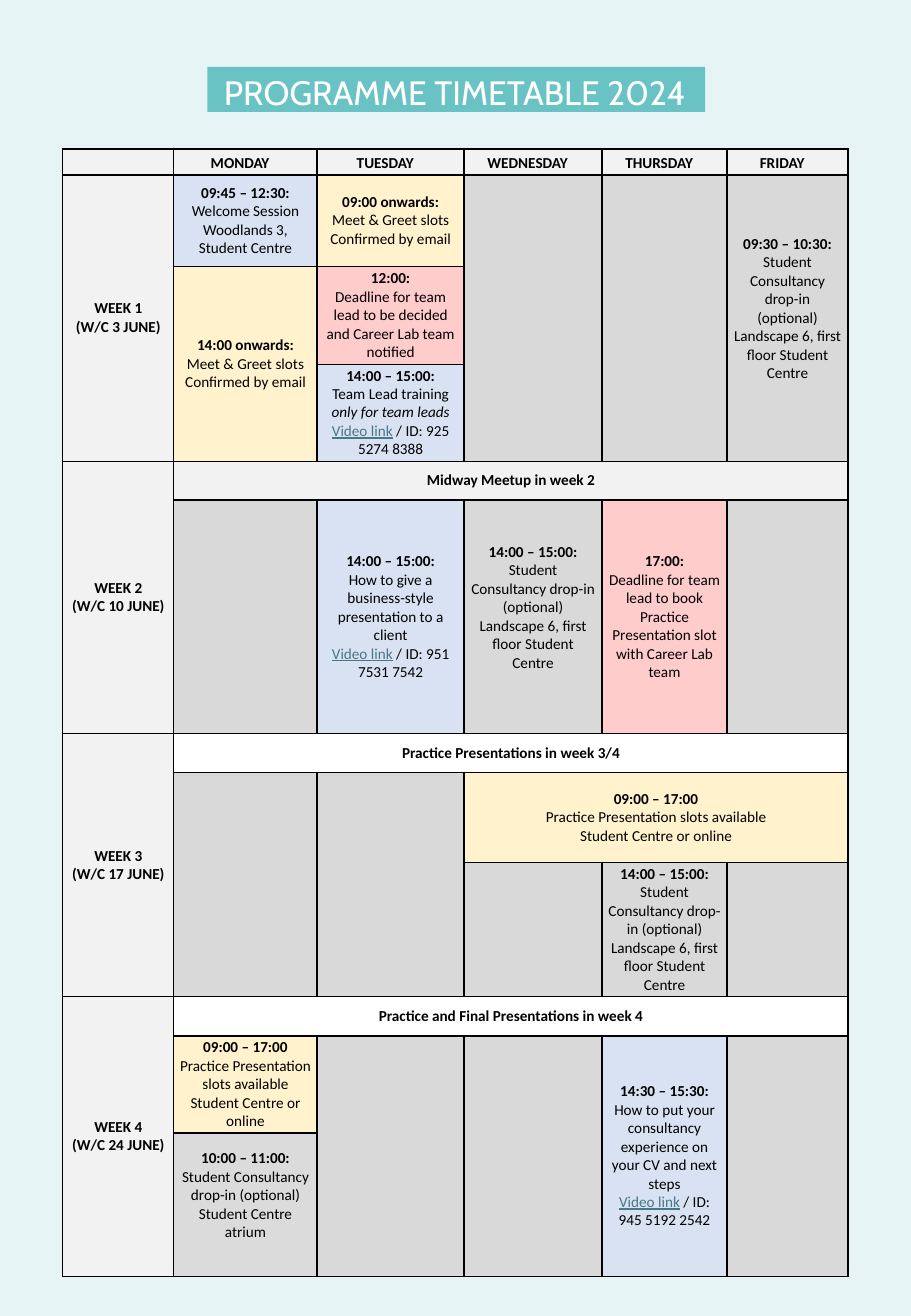
from lxml.etree import SubElement
from pptx import Presentation
from pptx.dml.color import RGBColor
from pptx.enum.shapes import MSO_SHAPE
from pptx.enum.text import MSO_ANCHOR, MSO_AUTO_SIZE, PP_ALIGN
from pptx.oxml.ns import qn
from pptx.util import Pt

COLORS = {
    "background": "E6F4F5", "banner": "69C3C4", "white": "FFFFFF", "black": "000000",
    "heading": "F2F2F2", "empty": "D9D9D9", "drop_in": "DBDBDB", "session": "D9E2F3",
    "slots": "FFF2CC", "deadline": "FFCCCC", "link": "467886",
}
FONT = "Calibri"
FONT_SIZE = 9
BLANK_LINE = 11
LINK = "Video link"

COLUMN_WIDTHS = [65.8, 85, 87.1, 81.8, 74.1, 71.7]
ROW_HEIGHTS = [15.4, 54.5, 57.8, 57.5, 23.1, 138.4, 23.1, 53.3, 79.4, 23.4, 57.5, 85]
DAYS = ["MONDAY", "TUESDAY", "WEDNESDAY", "THURSDAY", "FRIDAY"]

# row, row count, lines
WEEKS = [
    (1, 3, ["WEEK 1", "(W/C 3 JUNE)"]),
    (4, 2, ["WEEK 2", "(W/C 10 JUNE)"]),
    (6, 3, ["WEEK 3", "(W/C 17 JUNE)"]),
    (9, 3, ["WEEK 4", "(W/C 24 JUNE)"]),
]
BANNERS = [
    (4, "heading", "Midway Meetup in week 2"),
    (6, "white", "Practice Presentations in week 3/4"),
    (9, "white", "Practice and Final Presentations in week 4"),
]
EMPTY_BLOCKS = [(1, 3, 3), (1, 4, 3), (7, 1, 2), (7, 2, 2), (10, 2, 2), (10, 3, 2), (10, 5, 2)]
CONSULTANCY = "Student Consultancy drop-in (optional)"

EVENTS = [
    (1, 1, 1, 1, "session", ["09:45 – 12:30:", "Welcome Session", "Woodlands 3, Student Centre"]),
    (1, 2, 1, 1, "slots", ["09:00 onwards:", "Meet & Greet slots", "Confirmed by email"]),
    (1, 5, 3, 1, "empty", ["09:30 – 10:30:", "Student Consultancy drop-in\v(optional)",
                           "Landscape 6, first floor Student Centre"]),
    (2, 1, 2, 1, "slots", ["14:00 onwards:", "Meet & Greet slots", "Confirmed by email"]),
    (2, 2, 1, 1, "deadline", ["12:00:", "Deadline for team lead to be decided and Career Lab "
                              "team notified"]),
    (3, 2, 1, 1, "session", ["14:00 – 15:00:",
                             [("Team Lead training ", ""), ("only for team leads", "italic")],
                             [(LINK, "link"), (" / ID: 925 5274 8388", "")]]),
    (5, 2, 1, 1, "session", ["14:00 – 15:00:",
                             "How to give a business-style presentation to a client",
                             [(LINK, "link"), (" / ID: 951 7531 7542", "")]]),
    (5, 3, 1, 1, "empty", ["14:00 – 15:00:", CONSULTANCY,
                           "Landscape 6, first floor Student\vCentre"]),
    (5, 4, 1, 1, "deadline", ["17:00:", "Deadline for team lead to book Practice Presentation "
                              "slot with Career Lab team"]),
    (7, 3, 1, 3, "slots", ["09:00 – 17:00", "Practice Presentation slots available",
                           "Student Centre or online"]),
    (8, 4, 1, 1, "empty", ["14:00 – 15:00:", CONSULTANCY,
                           "Landscape 6, first floor Student Centre"]),
    (10, 1, 1, 1, "slots", ["09:00 – 17:00", "Practice Presentation slots available",
                            "Student Centre or online"]),
    (10, 4, 2, 1, "session", ["14:30 – 15:30:",
                              "How to put your consultancy experience on your CV and next steps",
                              [(LINK, "link"), (" / ID: 945 5192 2542", "")]]),
    (11, 1, 1, 1, "drop_in", ["10:00 – 11:00:", CONSULTANCY, "Student Centre atrium"]),
]
BLANK_LINE_BELOW = {(1, 5), (5, 3), (11, 1)}


def color(name):
    return RGBColor.from_string(COLORS[name])


def add_banner(slide):
    banner = slide.shapes.add_shape(MSO_SHAPE.RECTANGLE, Pt(123), Pt(39.7), Pt(295), Pt(26.7))
    banner.shadow.inherit = False
    banner.fill.solid()
    banner.fill.fore_color.rgb = color("banner")
    banner.line.fill.background()
    slide.shapes.title.element.addprevious(banner.element)


def format_title(title):
    title.left, title.top, title.width, title.height = Pt(44), Pt(35.3), Pt(451.4), Pt(74)
    text_frame = title.text_frame
    text_frame.text = "PROGRAMME TIMETABLE 2024"
    text_frame.auto_size = MSO_AUTO_SIZE.NONE
    text_frame.vertical_anchor = MSO_ANCHOR.TOP
    paragraph = text_frame.paragraphs[0]
    paragraph.alignment = PP_ALIGN.CENTER
    paragraph.line_spacing = 1.15
    font = paragraph.runs[0].font
    font.name, font.size, font.color.rgb = "Cabin", Pt(20), color("white")


def fill_cell(cell, fill):
    cell.fill.solid()
    cell.fill.fore_color.rgb = color(fill)


def prepare_cell(cell):
    cell.margin_left = cell.margin_right = Pt(3.6)
    cell.margin_top = cell.margin_bottom = Pt(1.4)
    cell.vertical_anchor = MSO_ANCHOR.MIDDLE
    properties = cell._tc.get_or_add_tcPr()
    for side in ("a:lnL", "a:lnR", "a:lnT", "a:lnB"):
        border = SubElement(properties, qn(side), w=str(Pt(1)))
        SubElement(SubElement(border, qn("a:solidFill")), qn("a:srgbClr"), val=COLORS["black"])
    fill_cell(cell, "empty")
    paragraph = cell.text_frame.paragraphs[0]
    SubElement(paragraph._p, qn("a:endParaRPr"), sz=str(FONT_SIZE * 100))


def format_run(run, bold, style):
    font = run.font
    font.name, font.size, font.bold = FONT, Pt(FONT_SIZE), bold
    font.color.rgb = color("link" if style == "link" else "black")
    font.italic = style == "italic"
    font.underline = style == "link"


def write_cell(cell, fill, lines, all_bold=False):
    fill_cell(cell, fill)
    text_frame = cell.text_frame
    for number, line in enumerate(lines):
        paragraph = text_frame.add_paragraph() if number else text_frame.paragraphs[0]
        paragraph.alignment = PP_ALIGN.CENTER
        pieces = [(line, "")] if isinstance(line, str) else line
        paragraph.text = pieces[0][0]
        for text, _ in pieces[1:]:
            paragraph.add_run().text = text
        styles = [style for _, style in pieces]
        for index, run in enumerate(paragraph.runs):
            style = styles[index] if index < len(styles) else ""
            format_run(run, all_bold or number == 0, style)


def merge_block(table, row, column, rows, columns):
    cell = table.cell(row, column)
    if rows * columns > 1:
        cell.merge(table.cell(row + rows - 1, column + columns - 1))
    return cell


def add_timetable(slide):
    frame = slide.shapes.add_table(len(ROW_HEIGHTS), len(COLUMN_WIDTHS), Pt(37.2), Pt(88.2),
                                   Pt(sum(COLUMN_WIDTHS)), Pt(sum(ROW_HEIGHTS)))
    table = frame.table
    for column, width in zip(table.columns, COLUMN_WIDTHS):
        column.width = Pt(width)
    for row, height in zip(table.rows, ROW_HEIGHTS):
        row.height = Pt(height)
    for cell in table.iter_cells():
        prepare_cell(cell)
    fill_cell(table.cell(0, 0), "heading")
    for column, day in enumerate(DAYS, 1):
        cell = table.cell(0, column)
        write_cell(cell, "heading", [day])
        cell.vertical_anchor = MSO_ANCHOR.BOTTOM
        cell.margin_right = Pt(10)
    for row, rows, lines in WEEKS:
        write_cell(merge_block(table, row, 0, rows, 1), "heading", lines, all_bold=True)
    for row, fill, text in BANNERS:
        write_cell(merge_block(table, row, 1, 1, len(DAYS)), fill, [text])
    for row, column, rows in EMPTY_BLOCKS:
        merge_block(table, row, column, rows, 1)
    for row, column, rows, columns, fill, lines in EVENTS:
        cell = merge_block(table, row, column, rows, columns)
        write_cell(cell, fill, lines)
        if (row, column) in BLANK_LINE_BELOW:
            cell.margin_bottom = Pt(1.4 + BLANK_LINE)


def main():
    """Build the programme timetable slide."""
    presentation = Presentation()
    presentation.slide_width, presentation.slide_height = Pt(540), Pt(780)
    slide = presentation.slides.add_slide(presentation.slide_layouts[5])
    slide.background.fill.solid()
    slide.background.fill.fore_color.rgb = color("background")
    format_title(slide.shapes.title)
    add_banner(slide)
    add_timetable(slide)
    presentation.save("out.pptx")


if __name__ == "__main__":
    main()
